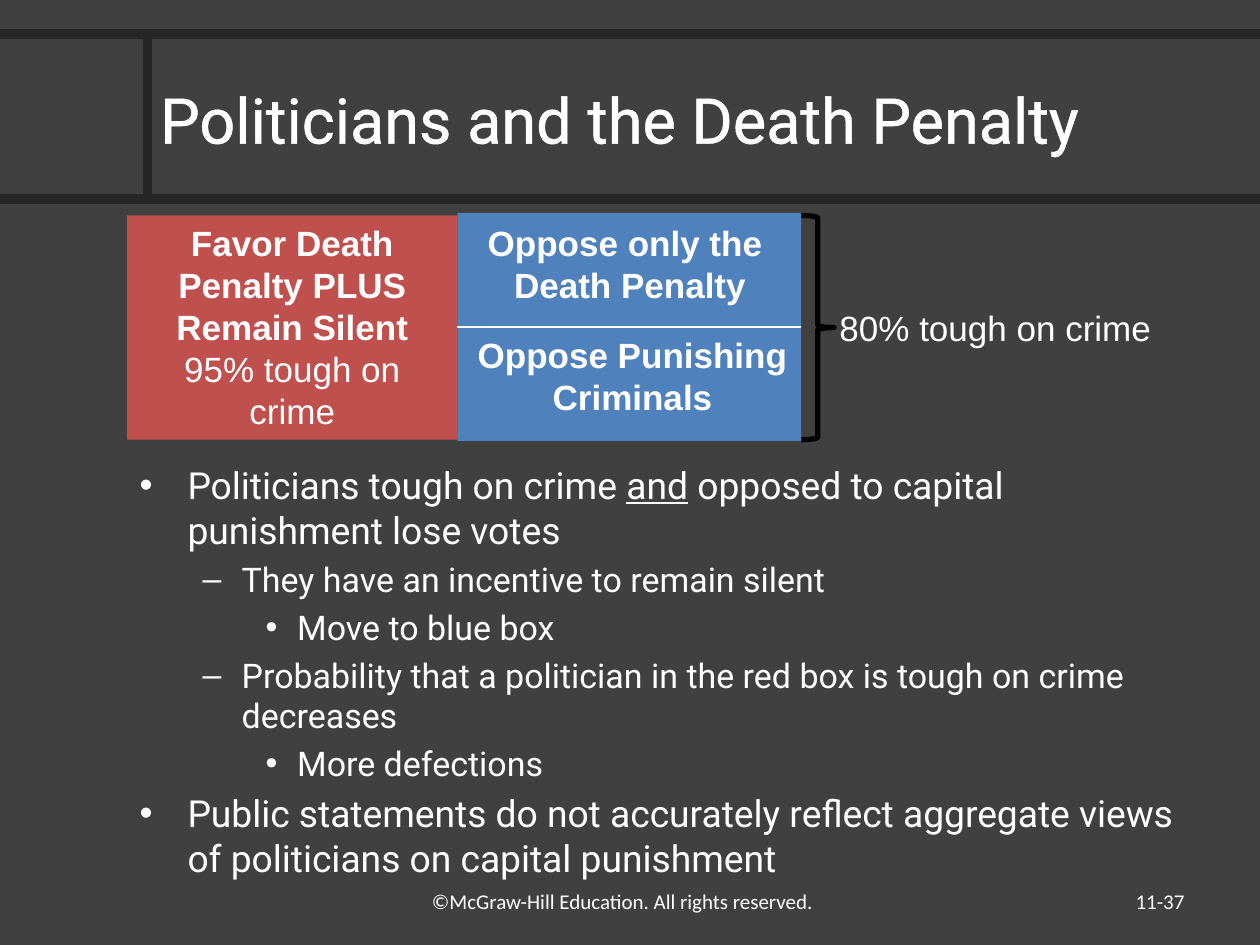
import pptx
import pptx.util
import pptx.dml.color
import pptx.enum.shapes
import pptx.enum.text
import pptx.oxml
import pptx.oxml.ns
import lxml.etree

Inches, Pt = pptx.util.Inches, pptx.util.Pt
ALIGN = pptx.enum.text.PP_ALIGN
ANCHOR = pptx.enum.text.MSO_ANCHOR
SHAPE = pptx.enum.shapes.MSO_SHAPE
qn = pptx.oxml.ns.qn
WHITE = "FFFFFF"


def color(hex_value):
    return pptx.dml.color.RGBColor.from_string(hex_value)


def write(shape, paragraphs, size, font, align=ALIGN.CENTER, anchor=ANCHOR.TOP):
    """Fill a shape; each paragraph is a list of (text, font format) runs."""
    frame = shape.text_frame
    frame.word_wrap = True
    frame.vertical_anchor = anchor
    for index, runs in enumerate(paragraphs):
        paragraph = frame.paragraphs[0] if index == 0 else frame.add_paragraph()
        paragraph.alignment = align
        for text, changes in runs:
            for number, line in enumerate(text.split("\n")):
                if number:
                    paragraph.add_line_break()
                run = paragraph.add_run()
                run.text = line
                run.font.color.rgb = color(WHITE)
                values = {"size": Pt(size), "name": font, **changes}
                for name, value in values.items():
                    setattr(run.font, name, value)


presentation = pptx.Presentation()
presentation.slide_width, presentation.slide_height = Inches(10), Inches(7.5)
slide = presentation.slides.add_slide(presentation.slide_layouts[5])
slide.background.fill.solid()
slide.background.fill.fore_color.rgb = color("404040")
shapes = slide.shapes

# Title with a thin white outline on its letters
title = shapes.title
title.left, title.top = Inches(1.17), Inches(0.3)
title.width, title.height = Inches(8.83), Inches(1.28)
write(title, [[("Politicians and the Death Penalty", {})]], 36, "Roboto",
      ALIGN.LEFT, ANCHOR.MIDDLE)
properties = title.text_frame.paragraphs[0].runs[0].font.fill
properties = title.text_frame.paragraphs[0].runs[0]._r.get_or_add_rPr()
outline = lxml.etree.Element(qn("a:ln"), w=str(Pt(1.45)))
outline_fill = lxml.etree.SubElement(outline, qn("a:solidFill"))
lxml.etree.SubElement(outline_fill, qn("a:srgbClr"), val=WHITE)
properties.insert(0, outline)

# Red and blue boxes
boxes = []
for left, top, width, height, fill in [
    (1.01, 1.71, 2.62, 1.78, "C0504D"),
    (3.63, 1.69, 2.73, 1.81, "4F81BD"),
]:
    box = shapes.add_shape(SHAPE.RECTANGLE, Inches(left), Inches(top),
                           Inches(width), Inches(height))
    box.shadow.inherit = False
    box.fill.solid()
    box.fill.fore_color.rgb = color(fill)
    box.line.fill.background()
    boxes.append(box)
red_box, blue_box = boxes
write(red_box, [[("Favor Death Penalty PLUS Remain Silent", {"bold": True})],
                [("95% tough on crime", {})]], 20, "Arial")

# Frame lines around the title, and the divider of the blue box
for x1, y1, x2, y2, hex_value, width in [
    (0, 1.58, 10, 1.58, "262626", 5.5),
    (1.17, 0.27, 1.17, 1.58, "262626", 5.5),
    (0, 0.27, 10, 0.27, "262626", 5.5),
    (3.63, 2.6, 6.36, 2.6, WHITE, 1),
]:
    line = shapes.add_connector(pptx.enum.shapes.MSO_CONNECTOR.STRAIGHT,
                                Inches(x1), Inches(y1), Inches(x2), Inches(y2))
    line.line.color.rgb = color(hex_value)
    line.line.width = Pt(width)
    lxml.etree.SubElement(line._element.spPr, qn("a:effectLst"))
divider = line
divider.begin_connect(blue_box, 1)
divider.end_connect(blue_box, 3)

# Brace beside the blue box
brace = shapes.add_shape(SHAPE.RIGHT_BRACE, Inches(6.36), Inches(1.71),
                         Inches(0.26), Inches(1.78))
brace.shadow.inherit = False
brace.fill.background()
brace.line.color.rgb = color("000000")
brace.line.width = Pt(3)

# Box labels, footer and slide number
bold = {"bold": True}
for text, left, top, width, height, size, font, changes, align, anchor in [
    ("Oppose only the \nDeath Penalty", 3.61, 1.71, 2.78, 0.77, 20, "Arial",
     bold, ALIGN.CENTER, ANCHOR.TOP),
    ("Oppose Punishing Criminals", 3.63, 2.6, 2.78, 0.77, 20, "Arial",
     bold, ALIGN.CENTER, ANCHOR.TOP),
    ("80% tough on crime", 6.51, 2.38, 2.78, 0.44, 20, "Arial",
     {}, ALIGN.CENTER, ANCHOR.TOP),
    ("©McGraw-Hill Education. All rights reserved.", 3.33, 7, 3.94, 0.35, 12,
     "Calibri", {}, ALIGN.LEFT, ANCHOR.TOP),
    ("11-37", 7.17, 6.95, 2.33, 0.4, 12, "Calibri", {}, ALIGN.RIGHT, ANCHOR.MIDDLE),
]:
    label = shapes.add_textbox(Inches(left), Inches(top), Inches(width), Inches(height))
    write(label, [[(text, changes)]], size, font, align, anchor)

# Bulleted list
levels = [  # bullet, left margin, hanging indent, text size
    ("•", 0.38, 0.38, 21.3),
    ("–", 0.81, 0.31, 19.4),
    ("•", 1.25, 0.25, 19.4),
]
items = [
    (0, [("Politicians tough on crime ", {}), ("and", {"underline": True}),
         (" opposed to capital punishment lose votes", {})]),
    (1, [("They have an incentive to remain silent", {})]),
    (2, [("Move to blue box", {})]),
    (1, [("Probability that a politician in the red box is tough on crime decreases", {})]),
    (2, [("More defections", {})]),
    (0, [("Public statements do not accurately reflect aggregate views of "
          "politicians on capital punishment", {})]),
]
body = shapes.add_textbox(Inches(1.01), Inches(3.62), Inches(8.49), Inches(3.08))
write(body, [[(text, {**changes, "size": Pt(levels[level][3])}) for text, changes in runs]
             for level, runs in items], 21.3, "Roboto", ALIGN.LEFT)
for index, (paragraph, (level, runs)) in enumerate(zip(body.text_frame.paragraphs, items)):
    bullet, margin, hanging, size = levels[level]
    paragraph.level = level
    if index:
        paragraph.space_before = Pt(4)
    properties = paragraph._p.get_or_add_pPr()
    properties.set("marL", str(Inches(margin)))
    properties.set("indent", str(-Inches(hanging)))
    lxml.etree.SubElement(properties, qn("a:buFont"), typeface="Arial")
    lxml.etree.SubElement(properties, qn("a:buChar"), char=bullet)

presentation.save("out.pptx")
